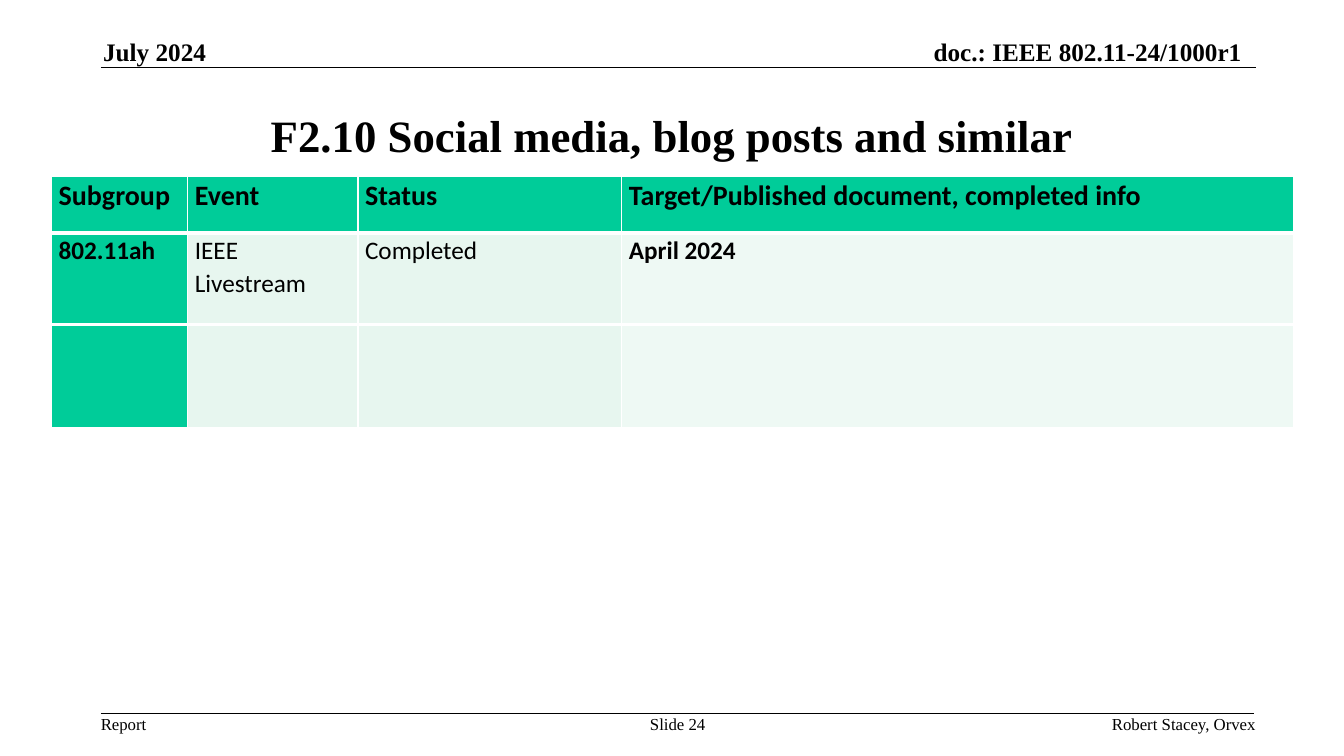
from lxml.etree import SubElement
from pptx import Presentation
from pptx.dml.color import RGBColor
from pptx.enum.shapes import MSO_CONNECTOR
from pptx.enum.text import MSO_ANCHOR, MSO_AUTO_SIZE, PP_ALIGN
from pptx.oxml.ns import qn
from pptx.util import Cm, Pt

COLORS = {
    "text": "000000",
    "border": "FFFFFF",
    "heading": "00CC99",
    "body": "E7F6EF",
    "last": "EEF9F4",
}


def write(frame, text, font="Times New Roman", size=12, bold=False,
          align=PP_ALIGN.LEFT, spacing=None):
    paragraph = frame.paragraphs[0]
    paragraph.alignment = align
    paragraph.line_spacing = spacing
    run = paragraph.add_run()
    run.text = text
    run.font.name = font
    run.font.size = Pt(size)
    run.font.bold = bold
    run.font.color.rgb = RGBColor.from_string(COLORS["text"])


def set_border(cell, side, points):
    line = SubElement(cell._tc.get_or_add_tcPr(), qn(f"a:{side}"), w=str(Pt(points)))
    fill = SubElement(line, qn("a:solidFill"))
    SubElement(fill, qn("a:srgbClr"), val=COLORS["border"])


prs = Presentation()
prs.slide_width = Cm(33.87)
prs.slide_height = Cm(19.05)
slide = prs.slides.add_slide(prs.slide_layouts[6])

for rule_top, rule_right in [(1.7, 31.65), (17.98, 31.6)]:
    rule = slide.shapes.add_connector(
        MSO_CONNECTOR.STRAIGHT, Cm(2.54), Cm(rule_top), Cm(rule_right), Cm(rule_top))
    rule.line.color.rgb = RGBColor.from_string(COLORS["text"])
    rule.line.width = Pt(1)
    SubElement(rule._element.spPr, qn("a:effectLst"))

title = slide.shapes.add_textbox(Cm(2.54), Cm(1.9), Cm(28.79), Cm(2.96)).text_frame
title.word_wrap = True
title.vertical_anchor = MSO_ANCHOR.MIDDLE
write(title, "F2.10 Social media, blog posts and similar",
      size=32, bold=True, align=PP_ALIGN.CENTER)

header = {"top": 0.91, "height": 0.77, "anchor": MSO_ANCHOR.BOTTOM, "size": 18, "bold": True}
footer = {"top": 17.98, "height": 0.51, "anchor": MSO_ANCHOR.TOP, "size": 12, "bold": False}
for band, text, left, width, align in [
    (header, "July 2024", 2.6, 3.73, PP_ALIGN.LEFT),
    (header, "doc.: IEEE 802.11-24/1000r1", 21.84, 9.45, PP_ALIGN.RIGHT),
    (footer, "Report", 2.54, 1.17, PP_ALIGN.LEFT),
    (footer, "Slide 24", 16.33, 1.5, PP_ALIGN.CENTER),
    (footer, "Robert Stacey, Orvex", 25.63, 6.02, PP_ALIGN.RIGHT),
]:
    label = slide.shapes.add_textbox(
        Cm(left), Cm(band["top"]), Cm(width), Cm(band["height"])).text_frame
    label.margin_left = label.margin_right = label.margin_top = label.margin_bottom = 0
    label.word_wrap = False
    label.auto_size = MSO_AUTO_SIZE.SHAPE_TO_FIT_TEXT
    label.vertical_anchor = band["anchor"]
    write(label, text, size=band["size"], bold=band["bold"], align=align)

column_widths = [3.43, 4.29, 6.65, 16.94]
row_heights = [1.42, 2.31, 2.62]
posts = [
    ["Subgroup", "Event", "Status", "Target/Published document, completed info"],
    ["802.11ah", "IEEE Livestream", "Completed", "April 2024"],
    ["", "", "", ""],
]
column_fills = ["heading", "body", "body", "last"]

table = slide.shapes.add_table(
    len(posts), len(column_widths), Cm(1.3), Cm(4.45),
    Cm(sum(column_widths)), Cm(sum(row_heights))).table
for column, width in zip(table.columns, column_widths):
    column.width = Cm(width)
for row, height in zip(table.rows, row_heights):
    row.height = Cm(height)

for r, post in enumerate(posts):
    for c, text in enumerate(post):
        cell = table.cell(r, c)
        cell.margin_left = cell.margin_right = Cm(0.18)
        cell.margin_top = cell.margin_bottom = 0
        for side, points in [("lnL", 1), ("lnR", 1), ("lnT", 3 if r else 1), ("lnB", 3)]:
            set_border(cell, side, points)
        cell.fill.solid()
        cell.fill.fore_color.rgb = RGBColor.from_string(
            COLORS[column_fills[c] if r else "heading"])
        if text:
            write(cell.text_frame, text, font="Calibri", size=18 if r else 20,
                  bold=r == 0 or c in (0, 3), spacing=1.07)

prs.save("out.pptx")
